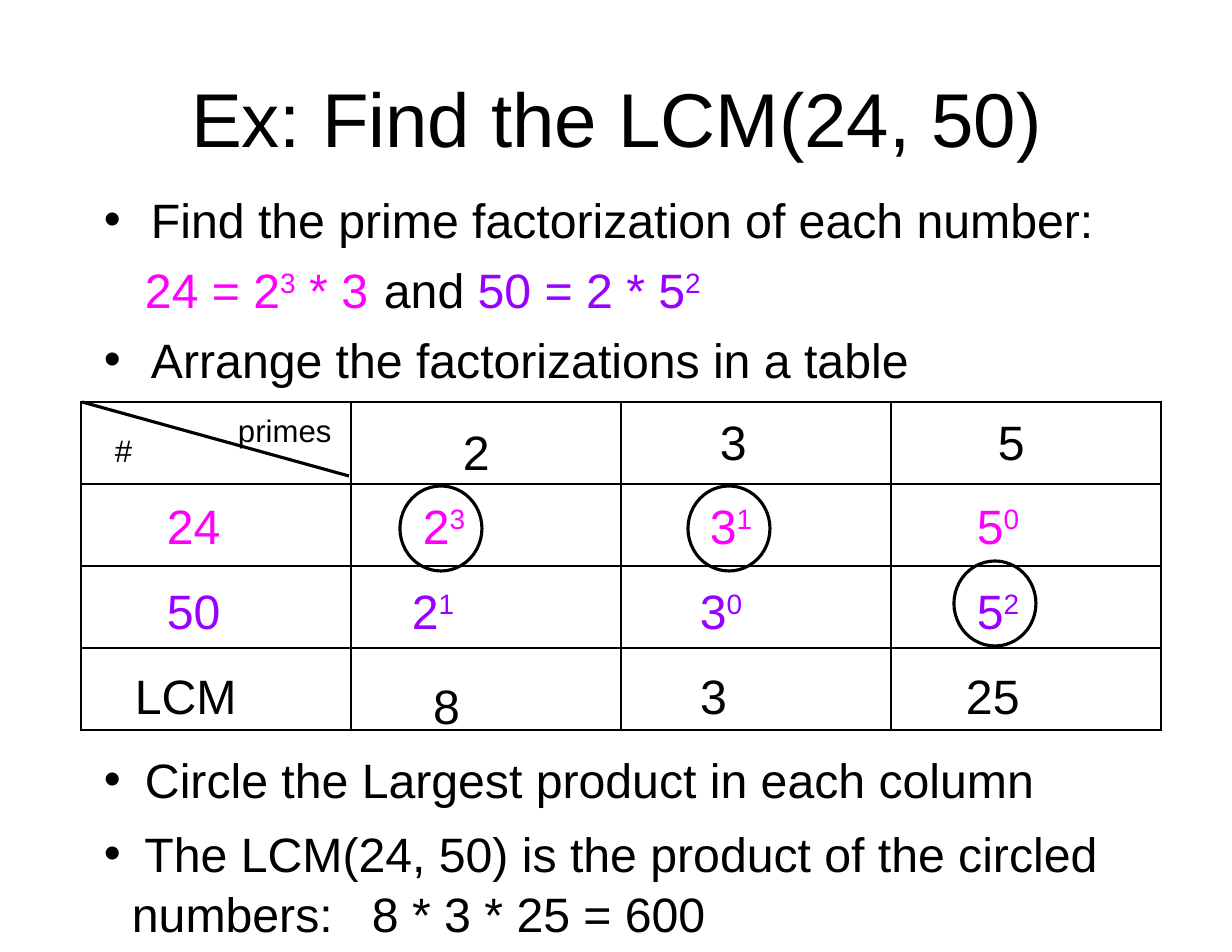
import pptx
import pptx.util
import pptx.dml.color
import pptx.enum.shapes
import pptx.enum.text
import pptx.oxml.ns
from dataclasses import dataclass
from lxml import etree


@dataclass(frozen=True)
class Theme:
    ink: str = "000000"
    pink: str = "FF00FF"
    plum: str = "9900FF"
    font: str = "Arial"
    head: int = 49
    body: int = 31
    note: int = 20
    thin: int = 1
    bold: int = 2


def px(n):
    return pptx.util.Emu(round(n * 914400 / 112))


def rgb(hue):
    return pptx.dml.color.RGBColor.from_string(hue)


def node(root, tag, **attrs):
    item = etree.SubElement(root, pptx.oxml.ns.qn(tag))
    for key, val in attrs.items():
        item.set(key, str(val))
    return item


class Sheet:
    def __init__(self, slide, theme):
        self.slide = slide
        self.theme = theme

    def box(self, x, y, w, h):
        frame = self.slide.shapes.add_textbox(px(x), px(y), px(w), px(h)).text_frame
        frame.word_wrap = True
        frame.margin_left = frame.margin_right = px(12)
        frame.margin_top = frame.margin_bottom = px(7)
        return frame

    def style(self, run, size, hue, base=0):
        font = run.font
        font.name, font.size = self.theme.font, pptx.util.Pt(size)
        font.color.rgb = rgb(hue)
        if base:
            font._element.set("baseline", str(base))

    def fill(self, para, parts, size=None):
        para.line_spacing = 1.05
        for text, hue, base in parts:
            run = para.add_run()
            run.text = text
            self.style(run, size or self.theme.body, hue, base)

    def title(self, text, x, y, w, h):
        frame = self.box(x, y, w, h)
        frame.vertical_anchor = pptx.enum.text.MSO_ANCHOR.MIDDLE
        frame.text = text
        para = frame.paragraphs[0]
        para.alignment = pptx.enum.text.PP_ALIGN.CENTER
        self.style(para.runs[0], self.theme.head, self.theme.ink)

    def label(self, text, x, y, w, h=71, hue=None, power="", size=None):
        hue = hue or self.theme.ink
        parts = [(text, hue, 0)] + ([(power, hue, 30000)] if power else [])
        self.fill(self.box(x, y, w, h).paragraphs[0], parts, size)

    def indent(self, para, left, first, mark="", tab=0):
        props = para._p.get_or_add_pPr()
        props.set("marL", str(px(left)))
        props.set("indent", str(px(first)))
        if mark:
            node(props, "a:buFont", typeface=self.theme.font)
            node(props, "a:buChar", char=mark)
        else:
            node(props, "a:buNone")
        if tab:
            node(node(props, "a:tabLst"), "a:tab", pos=px(tab), algn="l")

    def points(self, lines, x, y, w, h):
        frame = self.box(x, y, w, h)
        for i, (parts, left, first, mark, tab) in enumerate(lines):
            para = frame.add_paragraph() if i else frame.paragraphs[0]
            self.indent(para, left, first, mark, tab)
            self.fill(para, parts)
            if i:
                para.space_before = pptx.util.Pt(6)

    def border(self, cell, **sides):
        props = cell._tc.get_or_add_tcPr()
        for i, side in enumerate("LRTB"):
            wide = pptx.util.Pt(sides.get(side, self.theme.thin))
            line = etree.Element(pptx.oxml.ns.qn("a:ln" + side), w=str(wide))
            node(node(line, "a:solidFill"), "a:srgbClr", val=self.theme.ink)
            props.insert(i, line)

    def table(self, x, y, wide, high, rows, cols, split):
        grid = self.slide.shapes.add_table(
            rows, cols, px(x), px(y), px(wide * cols), px(high * rows)).table
        for r in range(rows):
            grid.rows[r].height = px(high)
            for c in range(cols):
                cell = grid.cell(r, c)
                cell.fill.background()
                sides = {split - 1: {"B": self.theme.bold}, split: {"T": self.theme.bold}}
                self.border(cell, **sides.get(r, {}))

    def line(self, x1, y1, x2, y2):
        line = self.slide.shapes.add_connector(
            pptx.enum.shapes.MSO_CONNECTOR.STRAIGHT, px(x1), px(y1), px(x2), px(y2))
        line.line.color.rgb = rgb(self.theme.ink)
        line.line.width = pptx.util.Pt(self.theme.bold)
        node(line._element.spPr, "a:effectLst")

    def ring(self, x, y, w=82, h=85):
        ring = self.slide.shapes.add_shape(
            pptx.enum.shapes.MSO_SHAPE.OVAL, px(x), px(y), px(w), px(h))
        ring.shadow.inherit = False
        ring.fill.background()
        ring.line.color.rgb = rgb(self.theme.ink)
        ring.line.width = pptx.util.Pt(self.theme.bold)


def main():
    deck = pptx.Presentation()
    deck.slide_width, deck.slide_height = px(1232), px(952)
    look = Theme()
    sheet = Sheet(deck.slides.add_slide(deck.slide_layouts[6]), look)
    ink, pink, plum = look.ink, look.pink, look.plum

    sheet.title("Ex: Find the LCM(24, 50)", 62, 38, 1109, 159)
    factors = [("24 = 2", pink, 0), ("3", pink, 30000), (" * 3", pink, 0),
               ("\tand ", ink, 0), ("50 = 2 * 5", plum, 0), ("2", plum, 30000)]
    sheet.points([
        ([("Find the prime factorization of each number:", ink, 0)], 47, -47, "•", 0),
        (factors, 0, 41, "", 423),
        ([("Arrange the factorizations in a table", ink, 0)], 47, -47, "•", 0),
    ], 92, 180, 1057, 254)

    sheet.table(81, 402, 270, 82, rows=4, cols=4, split=3)
    sheet.line(82, 402, 349, 476)
    sheet.label("#", 103, 423, 52, 49, size=look.note)
    sheet.label("primes", 226, 402, 123, 49, size=look.note)
    for text, x, y in [("2", 451, 412), ("3", 708, 402), ("5", 986, 402)]:
        sheet.label(text, x, y, 62)

    rows = [
        (486, pink, [("24", "", 155), ("2", "3", 411), ("3", "1", 698), ("5", "0", 965)]),
        (571, plum, [("50", "", 155), ("2", "1", 400), ("3", "0", 688), ("5", "2", 965)]),
    ]
    for y, hue, cells in rows:
        for text, power, x in cells:
            sheet.label(text, x, y, 92, hue=hue, power=power)
    for x, y in [(400, 486), (688, 486), (954, 561)]:
        sheet.ring(x, y)
    for text, x, y, w in [("LCM", 123, 656, 195), ("8", 421, 666, 72),
                          ("3", 688, 656, 72), ("25", 954, 656, 113)]:
        sheet.label(text, x, y, w)

    sheet.points([([("Circle the Largest product in each column", ink, 0)],
                   41, -41, "•", 0)], 92, 740, 1077, 71)
    result = "The LCM(24, 50) is the product of the circled numbers:\t8 * 3 * 25 = 600"
    sheet.points([([(" " + result, ink, 0)], 28, -28, "•", 268)], 92, 814, 1077, 129)
    deck.save("out.pptx")


if __name__ == "__main__":
    main()
